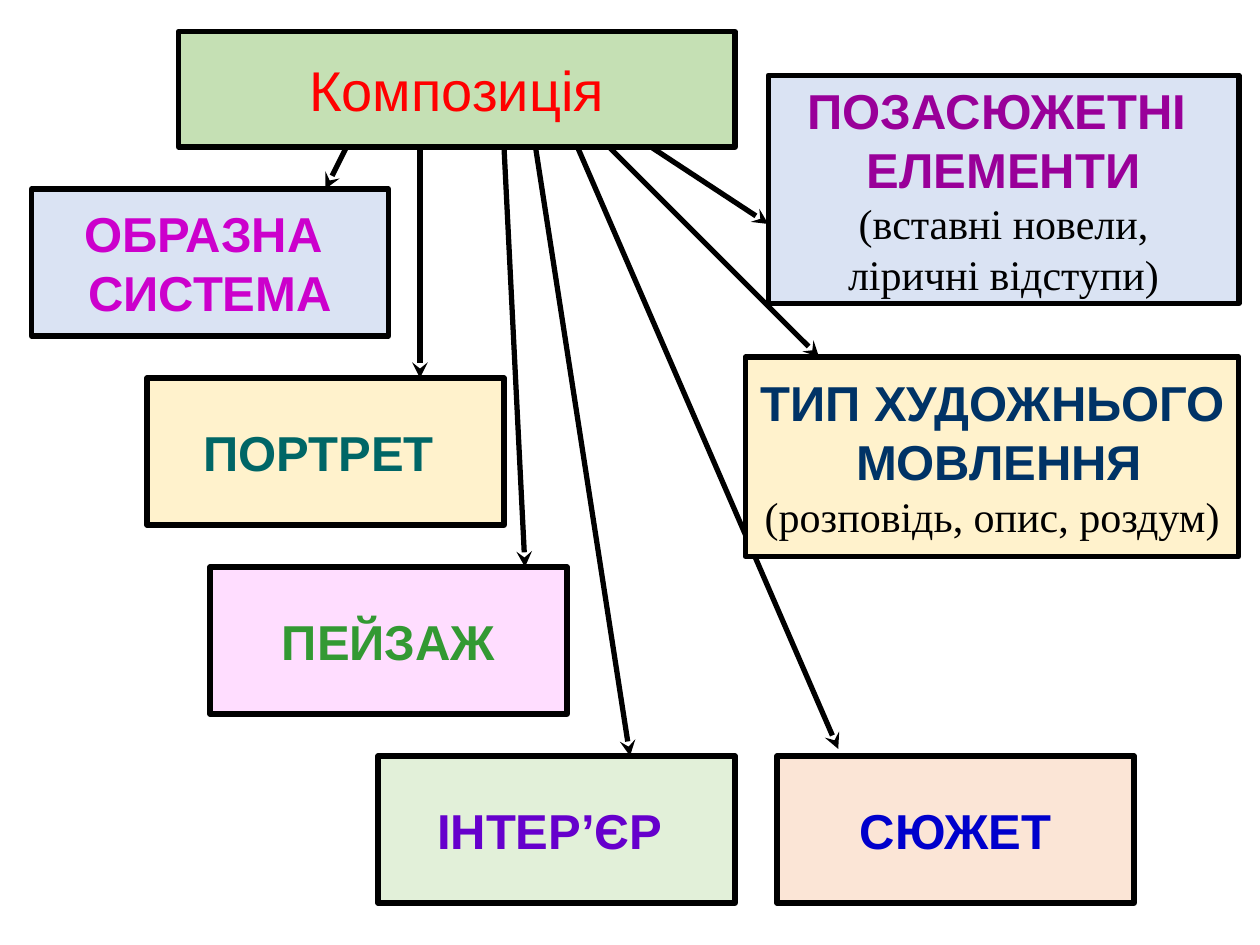
from dataclasses import dataclass

import lxml.etree
import pptx
import pptx.dml.color
import pptx.enum.shapes
import pptx.enum.text
import pptx.oxml.ns
import pptx.util

INK = "000000"
OUTLINE = "800000"
LINE_W = 3
BRANCH_Y = 84


@dataclass(frozen=True)
class Box:
    x: float
    y: float
    fill: str
    color: str
    heading: tuple[str, ...]
    details: tuple[str, ...] = ()
    w: float = 204
    h: float = 84
    size: float = 28
    bold: bool = True


@dataclass(frozen=True)
class Arrow:
    x1: float
    x2: float
    y2: float


TITLE = Box(102, 18, "C5E0B4", "FF0000", ("Композиція",), w=318, h=66, size=32, bold=False)

BOXES = [
    Box(439, 43, "DAE3F3", "990099", ("ПОЗАСЮЖЕТНІ ", "ЕЛЕМЕНТИ"),
        ("(вставні новели,", "ліричні відступи)"), w=269, h=130.5),
    Box(426, 204, "FFF2CC", "003366", ("ТИП ХУДОЖНЬОГО", " МОВЛЕННЯ"),
        ("(розповідь, опис, роздум)",), w=282, h=114),
    Box(18, 108, "DAE3F3", "CC00CC", ("ОБРАЗНА ", "СИСТЕМА")),
    Box(84, 216, "FFF2CC", "006666", ("ПОРТРЕТ ",)),
    Box(120, 324, "FFDDFF", "339933", ("ПЕЙЗАЖ",)),
    Box(216, 432, "E2F0D9", "6600CC", ("ІНТЕР’ЄР ",)),
    Box(444, 432, "FBE5D6", "0000CC", ("СЮЖЕТ",)),
]

PLOT_ARROW = Arrow(330, 479, 428)
ARROWS = [
    Arrow(198, 186, 108),
    Arrow(240, 240, 216),
    Arrow(288, 300, 324),
    Arrow(306, 360, 432),
    Arrow(348, 468, 204),
    Arrow(372, 439, 128),
]


def rgb(color: str) -> pptx.dml.color.RGBColor:
    return pptx.dml.color.RGBColor.from_string(color)


def add_child(parent, tag: str, **attrs: str):
    return lxml.etree.SubElement(parent, pptx.oxml.ns.qn(tag), attrs)


def add_run(p, text: str, font: str, size: float, color: str, bold: bool) -> None:
    r = p.add_run()
    r.text = text
    r.font.name = font
    r.font.size = pptx.util.Pt(size)
    r.font.bold = bold
    r.font.color.rgb = rgb(color)
    if font == "Arial":
        rpr = r.font._element
        ln = add_child(rpr, "a:ln", w=str(pptx.util.Pt(0.75)))
        add_child(add_child(ln, "a:solidFill"), "a:srgbClr", val=OUTLINE)
        rpr.insert(0, ln)


def format_box(sp, box: Box) -> None:
    sp.left, sp.top = pptx.util.Pt(box.x), pptx.util.Pt(box.y)
    sp.width, sp.height = pptx.util.Pt(box.w), pptx.util.Pt(box.h)
    sp.fill.solid()
    sp.fill.fore_color.rgb = rgb(box.fill)
    sp.line.color.rgb = rgb(INK)
    sp.line.width = pptx.util.Pt(LINE_W)
    tf = sp.text_frame
    tf.word_wrap = False
    tf.auto_size = pptx.enum.text.MSO_AUTO_SIZE.NONE
    tf.vertical_anchor = pptx.enum.text.MSO_ANCHOR.MIDDLE
    for i, text in enumerate(box.heading + box.details):
        p = tf.add_paragraph() if i else tf.paragraphs[0]
        p.alignment = pptx.enum.text.PP_ALIGN.CENTER
        if i < len(box.heading):
            add_run(p, text, "Arial", box.size, box.color, box.bold)
        else:
            add_run(p, text, "Times New Roman", 24, INK, False)


def add_box(s, box: Box) -> None:
    sp = s.shapes.add_shape(pptx.enum.shapes.MSO_SHAPE.RECTANGLE, 0, 0, 0, 0)
    sp.shadow.inherit = False
    format_box(sp, box)


def add_arrow(s, arrow: Arrow) -> None:
    cx = s.shapes.add_connector(
        pptx.enum.shapes.MSO_CONNECTOR.STRAIGHT,
        pptx.util.Pt(arrow.x1), pptx.util.Pt(BRANCH_Y),
        pptx.util.Pt(arrow.x2), pptx.util.Pt(arrow.y2),
    )
    cx.line.color.rgb = rgb(INK)
    cx.line.width = pptx.util.Pt(LINE_W)
    add_child(cx.line._get_or_add_ln(), "a:tailEnd", type="stealth")
    add_child(cx._element.spPr, "a:effectLst")


def main() -> None:
    prs = pptx.Presentation()
    prs.slide_width, prs.slide_height = pptx.util.Pt(720), pptx.util.Pt(540)
    s = prs.slides.add_slide(prs.slide_layouts.get_by_name("Title Only"))
    format_box(s.shapes.title, TITLE)
    add_arrow(s, PLOT_ARROW)
    for box in BOXES:
        add_box(s, box)
    for arrow in ARROWS:
        add_arrow(s, arrow)
    prs.save("out.pptx")


if __name__ == "__main__":
    main()
